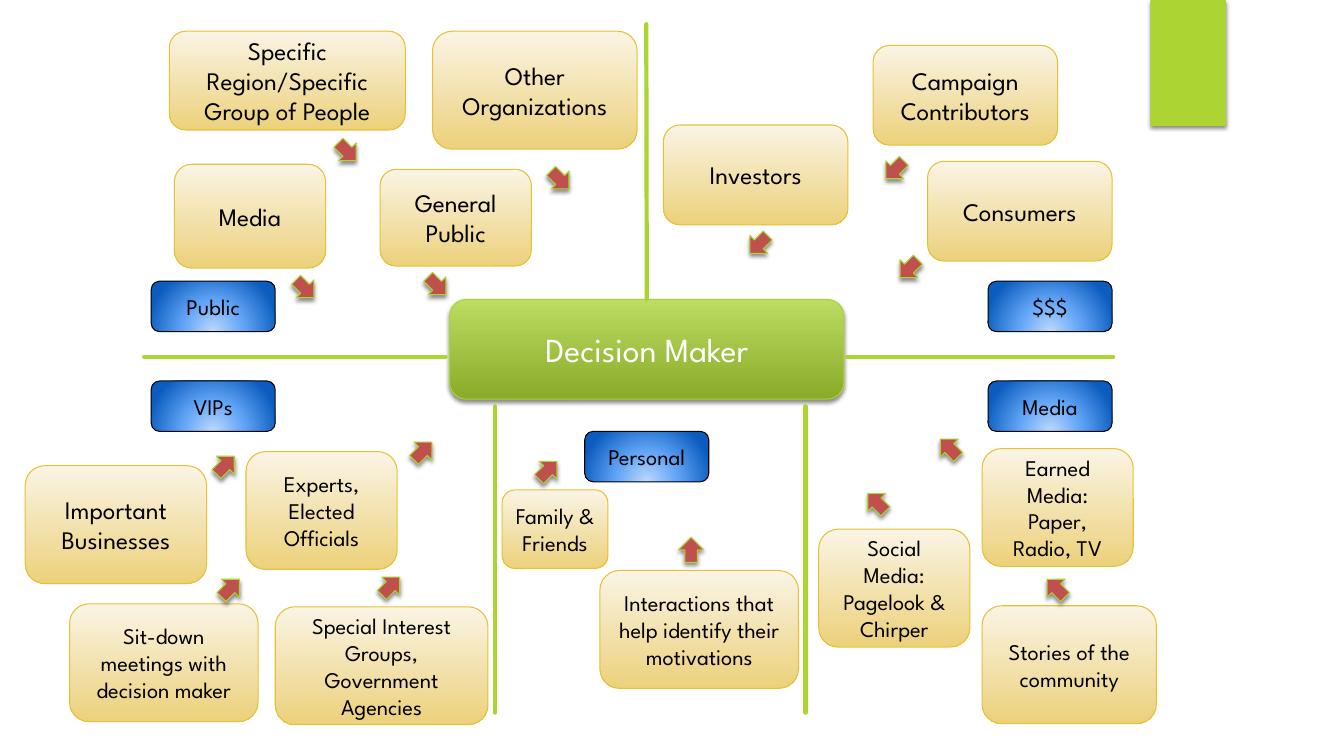
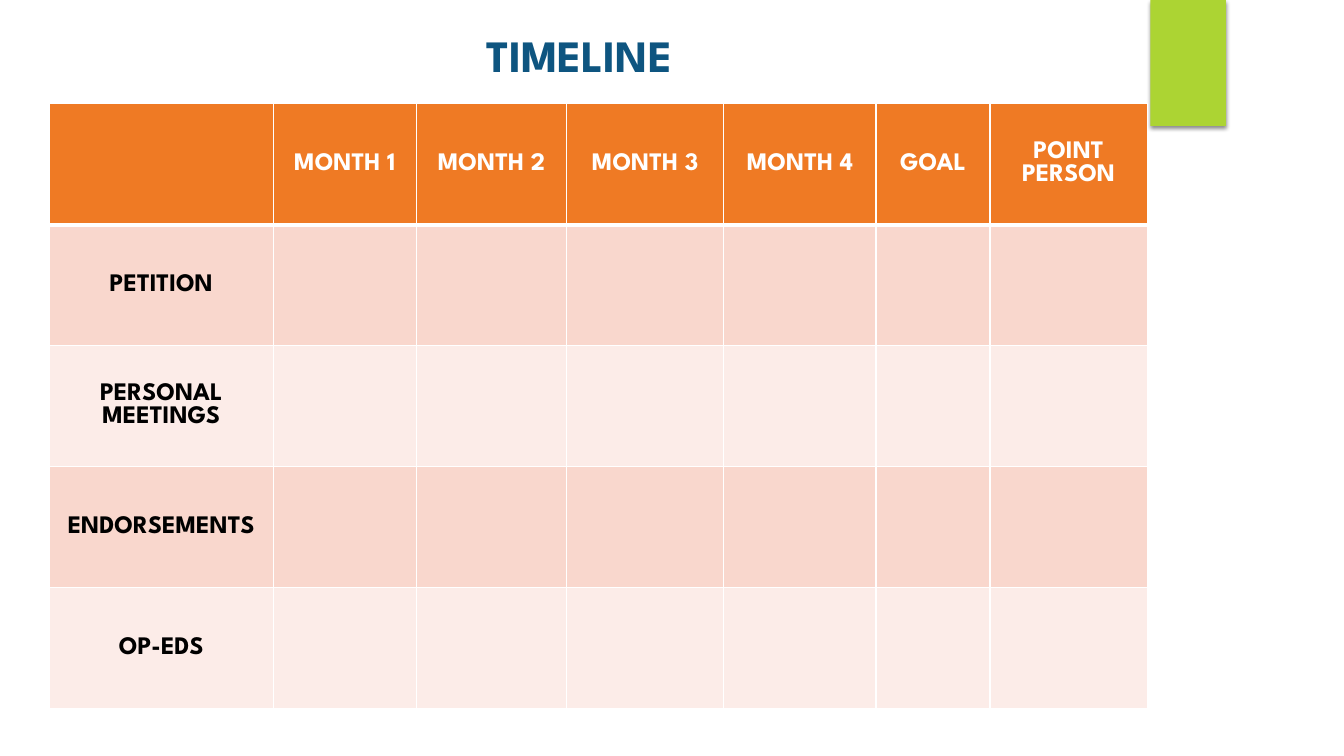
from dataclasses import dataclass

from lxml.etree import SubElement
from pptx import Presentation
from pptx.dml.color import RGBColor
from pptx.enum.shapes import MSO_CONNECTOR, MSO_SHAPE
from pptx.enum.text import MSO_ANCHOR, MSO_AUTO_SIZE, PP_ALIGN
from pptx.oxml.ns import qn
from pptx.util import Inches, Pt


@dataclass(frozen=True)
class Theme:
    font: str = "League Spartan"
    black: str = "000000"
    white: str = "FFFFFF"
    green: str = "ACD433"
    red: str = "C0504D"
    gold: str = "E6C133"
    navy: str = "0E5580"
    orange: str = "EF7A24"
    bands: tuple = ("F9D7CD", "FCECE8")
    leaf: tuple = ((0, "BCDC62"), (100, "8AAA29"))
    sand: tuple = ((0, "FAF4E5"), (100, "ECD17B"))
    sky: tuple = ((0, "BDD9FB"), (46, "62A5F6"), (100, "0B5CBE"))
    title: int = 32
    hub: int = 24
    large: int = 18
    small: int = 16


theme = Theme()


def write(frame, words, size=theme.small, color=theme.black, bold=False):
    frame.word_wrap = True
    para = frame.paragraphs[0]
    para.alignment = PP_ALIGN.CENTER
    run = para.add_run()
    run.text = words
    run.font.name = theme.font
    run.font.size = Pt(size)
    run.font.bold = bold
    run.font.color.rgb = RGBColor.from_string(color)


def draw(slide, kind, spot, fill, edge=None, glow=False, radial=False):
    """Add a shape; fill is one colour or a tuple of gradient stops."""
    shape = slide.shapes.add_shape(kind, *map(Inches, spot))
    props = shape.element.spPr
    if isinstance(fill, str):
        shape.fill.solid()
        shape.fill.fore_color.rgb = RGBColor.from_string(fill)
    else:
        grad = SubElement(props, qn("a:gradFill"), rotWithShape="1")
        props.find(qn("a:prstGeom")).addnext(grad)
        stops = SubElement(grad, qn("a:gsLst"))
        for place, color in fill:
            stop = SubElement(stops, qn("a:gs"), pos=str(place * 1000))
            SubElement(stop, qn("a:srgbClr"), val=color)
        if radial:
            way = SubElement(grad, qn("a:path"))
            way.set("path", "circle")
            SubElement(way, qn("a:fillToRect"), l="50000", t="130000",
                       r="50000", b="-30000")
        else:
            SubElement(grad, qn("a:lin"), ang="5400000", scaled="0")
    if edge:
        shape.line.color.rgb = RGBColor.from_string(edge)
        shape.line.width = Pt(0.75)
    else:
        shape.line.fill.background()
    shape.shadow.inherit = False
    if glow:
        cast = SubElement(props.find(qn("a:effectLst")), qn("a:outerShdw"),
                          blurRad=str(Pt(3)), dist=str(Pt(2)),
                          dir="5400000", rotWithShape="0")
        tint = SubElement(cast, qn("a:srgbClr"), val=theme.black)
        SubElement(tint, qn("a:alpha"), val="45000")
    shape.text_frame.vertical_anchor = MSO_ANCHOR.MIDDLE
    return shape


deck = Presentation()
deck.slide_width = Inches(13.33)
deck.slide_height = Inches(7.5)

# Power map
power = deck.slides.add_slide(deck.slide_layouts[6])

# The green tab belongs to the master, so every slide shows it
tab = draw(power, MSO_SHAPE.RECTANGLE, (11.41, 0, 0.75, 1.25), theme.green,
           glow=True)
deck.slide_master.shapes.element.append(tab.element)

hub = draw(power, MSO_SHAPE.ROUNDED_RECTANGLE, (4.46, 2.97, 3.91, 0.99),
           theme.leaf, theme.green, glow=True)
write(hub.text_frame, "Decision Maker", size=theme.hub, color=theme.white)

rules = [
    (6.41, 2.97, 6.41, 0.24),
    (4.91, 4.03, 4.91, 7.07),
    (7.99, 4.03, 7.99, 7.07),
    (8.4, 3.54, 11.04, 3.54),
    (4.42, 3.54, 1.43, 3.54),
]
for ends in rules:
    rule = power.shapes.add_connector(MSO_CONNECTOR.STRAIGHT,
                                      *map(Inches, ends))
    rule.line.color.rgb = RGBColor.from_string(theme.green)
    rule.line.width = Pt(3)
    props = rule.element.spPr
    props.find(qn("a:ln")).set("cap", "rnd")
    SubElement(props, qn("a:effectLst"))
    if ends == rules[0]:
        rule.begin_connect(hub, 0)

labels = [
    ("Public", 1.5, 2.79),
    ("$$$", 9.8, 2.79),
    ("VIPs", 1.5, 3.78),
    ("Media", 9.8, 3.78),
    ("Personal", 5.8, 4.28),
]
for words, left, top in labels:
    label = draw(power, MSO_SHAPE.ROUNDED_RECTANGLE, (left, top, 1.23, 0.5),
                 theme.sky, theme.black, radial=True)
    write(label.text_frame, words)

groups = {
    theme.large: [
        ("Specific Region/Specific Group of People", 1.68, 0.31, 2.34, 0.98),
        ("Other Organizations", 4.29, 0.31, 2.03, 1.17),
        ("Media", 1.73, 1.63, 1.5, 1.03),
        ("General Public", 3.77, 1.68, 1.5, 0.96),
        ("Campaign Contributors", 8.66, 0.45, 1.83, 0.99),
        ("Investors", 6.58, 1.24, 1.83, 0.99),
        ("Consumers", 9.2, 1.6, 1.83, 0.99),
        ("Important Businesses", 0.25, 4.62, 1.8, 1.17),
    ],
    theme.small: [
        ("Experts, Elected Officials", 2.44, 4.48, 1.5, 1.17),
        ("Sit-down meetings with decision maker", 0.69, 5.99, 1.87, 1.17),
        ("Special Interest Groups, Government Agencies",
         2.73, 6.02, 2.11, 1.17),
        ("Family & Friends", 4.98, 4.86, 1.05, 0.78),
        ("Interactions that help identify their motivations",
         5.95, 5.66, 1.97, 1.17),
        ("Social Media: Pagelook & Chirper", 8.12, 5.25, 1.5, 1.17),
        ("Earned Media: Paper, Radio, TV", 9.74, 4.45, 1.5, 1.17),
        ("Stories of the community", 9.74, 6.01, 1.73, 1.17),
    ],
}
for size, cards in groups.items():
    for words, *spot in cards:
        card = draw(power, MSO_SHAPE.ROUNDED_RECTANGLE, spot, theme.sand,
                    theme.gold)
        write(card.text_frame, words, size=size)

# Arrow corners by the angle they turn to
arrows = {
    0: [(6.73, 5.33)],
    45: [(2.11, 4.49), (4.07, 4.35), (2.16, 5.71), (3.75, 5.69),
         (5.31, 4.54)],
    135: [(3.32, 1.38), (5.43, 1.66), (2.9, 2.74), (4.21, 2.71)],
    225: [(8.75, 1.56), (7.4, 2.3), (8.89, 2.54)],
    315: [(9.29, 4.32), (8.57, 4.86), (10.35, 5.71)],
}
for angle, spots in arrows.items():
    for left, top in spots:
        arrow = draw(power, MSO_SHAPE.UP_ARROW, (left, top, 0.25, 0.25),
                     theme.red, theme.green, glow=True)
        arrow.rotation = angle

# Timeline
plan = deck.slides.add_slide(deck.slide_layouts[5])
title = plan.shapes.title
title.left, title.top = Inches(0.69), Inches(0.22)
title.width, title.height = Inches(10.11), Inches(0.64)
title.text_frame.auto_size = MSO_AUTO_SIZE.NONE
title.text_frame.vertical_anchor = MSO_ANCHOR.TOP
write(title.text_frame, "TIMELINE", size=theme.title, color=theme.navy,
      bold=True)

heads = ["", "MONTH 1", "MONTH 2", "MONTH 3", "MONTH 4", "GOAL",
         "POINT PERSON"]
tasks = ["PETITION", "PERSONAL MEETINGS", "ENDORSEMENTS", "OP-EDS"]
rows = [heads] + [[task] + [""] * (len(heads) - 1) for task in tasks]
widths = [2.22, 1.42, 1.49, 1.56, 1.51, 1.13, 1.56]
grid = plan.shapes.add_table(
    len(rows), len(heads), Inches(0.49), Inches(1.03),
    Inches(sum(widths)), Inches(1.2 * len(rows))).table
for column, width in zip(grid.columns, widths):
    column.width = Inches(width)
for r, row in enumerate(rows):
    grid.rows[r].height = Inches(1.2)
    for c, words in enumerate(row):
        cell = grid.cell(r, c)
        cell.vertical_anchor = MSO_ANCHOR.MIDDLE
        props = cell._tc.get_or_add_tcPr()
        for side in "LRTB":
            thick = (r, side) in ((0, "B"), (1, "T"))
            edge = SubElement(props, qn("a:ln" + side),
                              w=str(Pt(3 if thick else 1)))
            paint = SubElement(edge, qn("a:solidFill"))
            SubElement(paint, qn("a:srgbClr"), val=theme.white)
        cell.fill.solid()
        shade = theme.bands[(r - 1) % 2] if r else theme.orange
        cell.fill.fore_color.rgb = RGBColor.from_string(shade)
        if words:
            write(cell.text_frame, words, size=theme.large, bold=True,
                  color=theme.black if r else theme.white)

deck.save("out.pptx")
